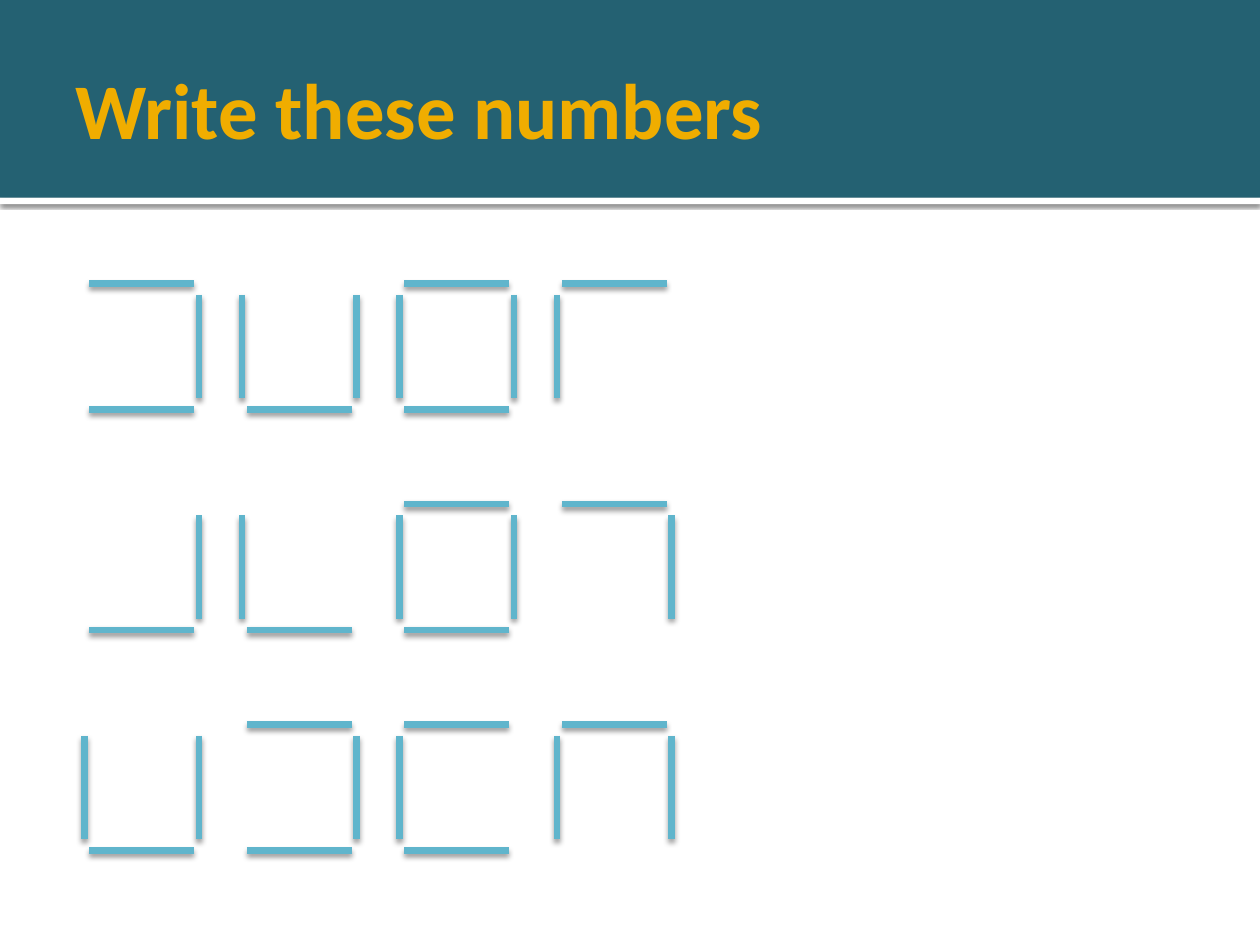
from lxml.etree import SubElement
from pptx import Presentation
from pptx.dml.color import RGBColor
from pptx.enum.shapes import MSO_CONNECTOR as Connector, MSO_SHAPE as Shape
from pptx.enum.text import MSO_ANCHOR as Anchor
from pptx.oxml.ns import qn
from pptx.util import Inches, Pt

COLORS = {
    "band": "246172",
    "rule": "FFFFFF",
    "title": "F0AD00",
    "segment": "60B5CC",
    "shadow": "000000",
}
WIDTH, HEIGHT = 10, 7.5
BAND_HEIGHT = 1.57
COLUMN, ROW = 1.25, 1.75
DIGIT_WIDTH, DIGIT_HEIGHT = 0.91, 1
INSET_X, INSET_Y = 0.04, 0.09
SEGMENTS = {
    "top": ((INSET_X, 0), (DIGIT_WIDTH - INSET_X, 0)),
    "bottom": ((INSET_X, DIGIT_HEIGHT), (DIGIT_WIDTH - INSET_X, DIGIT_HEIGHT)),
    "right": ((DIGIT_WIDTH, INSET_Y), (DIGIT_WIDTH, DIGIT_HEIGHT - INSET_Y)),
    "left": ((0, INSET_Y), (0, DIGIT_HEIGHT - INSET_Y)),
}
NUMBERS = [
    ["top bottom right", "bottom right left", "top bottom right left", "top left"],
    ["bottom right", "bottom left", "top bottom right left", "top right"],
    ["bottom right left", "top bottom right", "top bottom left", "top right left"],
]


def color(name):
    return RGBColor.from_string(COLORS[name])


def add_shadow(item, alpha, blur, distance):
    effects = SubElement(item._element.spPr, qn("a:effectLst"))
    shadow = SubElement(effects, qn("a:outerShdw"), blurRad=str(Pt(blur)),
                        dist=str(Pt(distance)), dir="5400000", rotWithShape="0")
    tint = SubElement(shadow, qn("a:srgbClr"), val=COLORS["shadow"])
    SubElement(tint, qn("a:alpha"), val=str(alpha * 1000))


def add_bar(page, box, fill):
    bar = page.shapes.add_shape(Shape.RECTANGLE, *map(Inches, box))
    bar.fill.solid()
    bar.fill.fore_color.rgb = color(fill)
    bar.line.fill.background()
    return bar


def add_text(page, box, text, size, fill, font="Calibri", bold=False):
    frame = page.shapes.add_textbox(*map(Inches, box)).text_frame
    frame.word_wrap = True
    frame.vertical_anchor = Anchor.MIDDLE
    frame.margin_left = Inches(0.1)
    frame.margin_right = frame.margin_top = frame.margin_bottom = Inches(0.05)
    span = frame.paragraphs[0].add_run()
    span.text = text
    span.font.name, span.font.size, span.font.bold = font, Pt(size), bold
    span.font.color.rgb = color(fill)


def add_header(page, box):
    left, top, width, height = box
    rule = add_bar(page, (left, top + height, width, 0.05), "rule")
    add_shadow(rule, alpha=60, blur=2.5, distance=0.8)
    add_bar(page, box, "band").shadow.inherit = False
    title_box = (left + width * 0.05, top + 0.17, width * 0.9, height - 0.2)
    add_text(page, title_box, "Write these numbers", size=45, fill="title", bold=True)


def add_digit(page, left, top, names):
    for name in names.split():
        (x1, y1), (x2, y2) = SEGMENTS[name]
        ends = (left + x1, top + y1, left + x2, top + y2)
        segment = page.shapes.add_connector(Connector.STRAIGHT, *map(Inches, ends))
        segment.line.color.rgb = color("segment")
        segment.line.width = Pt(3.82)
        add_shadow(segment, alpha=38, blur=3.1, distance=2)


def add_numbers(page, left, top):
    for row, digits in enumerate(NUMBERS):
        for column, names in enumerate(digits):
            add_digit(page, left + column * COLUMN, top + row * ROW, names)


def main():
    deck = Presentation()
    deck.slide_width, deck.slide_height = Inches(WIDTH), Inches(HEIGHT)
    page = deck.slides.add_slide(deck.slide_layouts[6])
    add_header(page, (0, 0, WIDTH, BAND_HEIGHT))
    add_numbers(page, left=0.67, top=2.25)
    deck.save("out.pptx")


if __name__ == "__main__":
    main()
